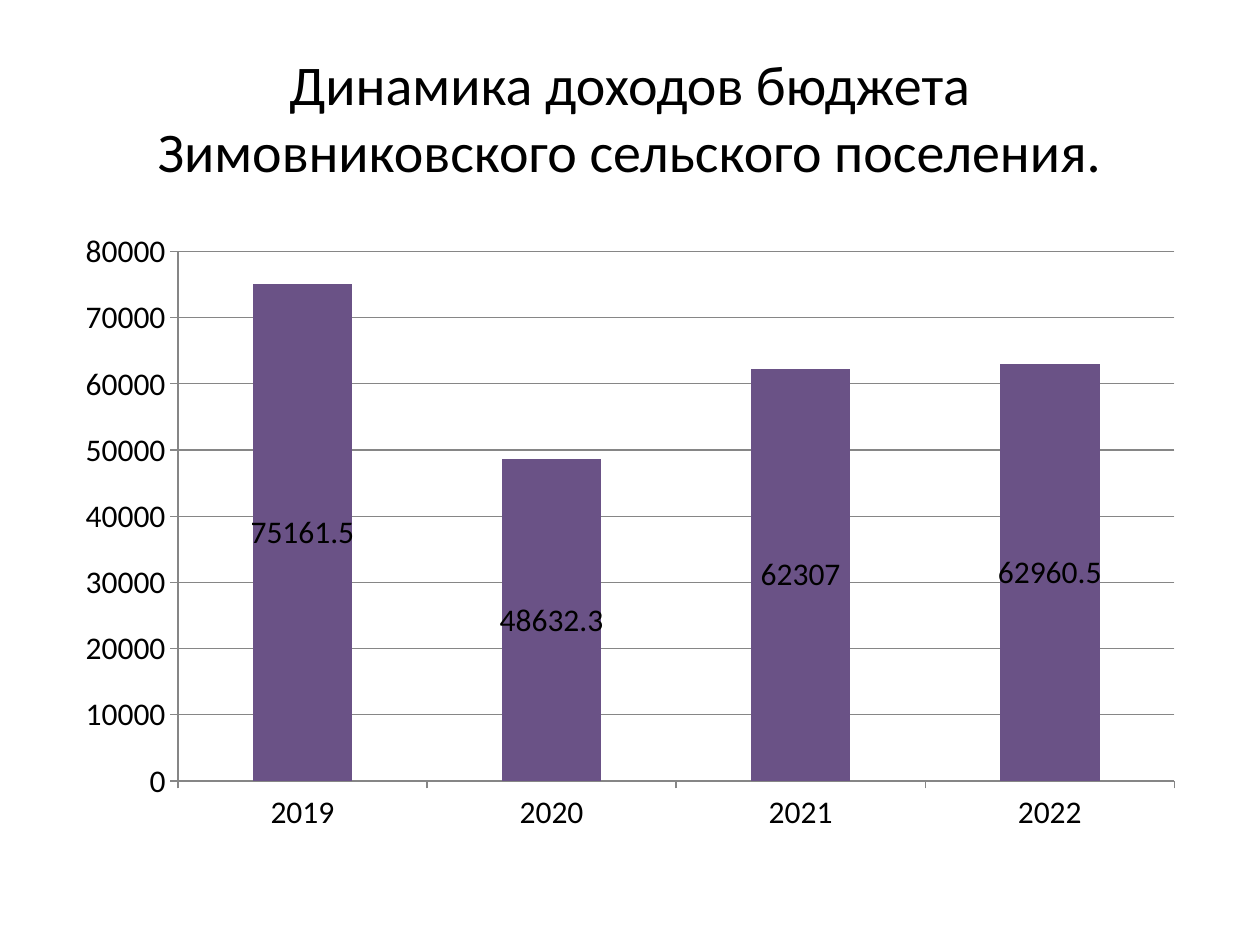
import pptx
import pptx.util
import pptx.chart.data
import pptx.dml.color
import pptx.enum.chart
import pptx.enum.text

RGB = pptx.dml.color.RGBColor
XL = pptx.enum.chart

# Content
TITLE = "Динамика доходов бюджета Зимовниковского сельского поселения."
YEARS = ["2019", "2020", "2021", "2022"]
BLACK = RGB(0x00, 0x00, 0x00)
GREY = RGB(0x86, 0x86, 0x86)
PURPLE = RGB(0x6A, 0x52, 0x86)
RED = RGB(0xC0, 0x50, 0x4D)
GREEN = RGB(0x9B, 0xBB, 0x59)
SERIES = [
    ("Series 1", (75161.5, 48632.3, 62307, 62960.5), PURPLE),
    ("Series 2", (0, 0, 0, 0), RED),
    ("Series 3", (0, 0, 0, 0), GREEN),
]
FONT = "Calibri"

# Geometry in px, 126 to the inch
SLIDE = (1260, 945)
TITLE_BOX = (63, 38, 1134, 157)
CHART_BOX = (63, 220, 1134, 624)


def emu(lengths):
    return [round(n * 914400 / 126) for n in lengths]


def style_font(font, size):
    font.name = FONT
    font.size = pptx.util.Pt(size)
    font.color.rgb = BLACK


prs = pptx.Presentation()
prs.slide_width, prs.slide_height = emu(SLIDE)
s = prs.slides.add_slide(prs.slide_layouts[5])

# Title
title = s.shapes.title
title.left, title.top, title.width, title.height = emu(TITLE_BOX)
tf = title.text_frame
tf.text = TITLE
tf.word_wrap = True
tf.vertical_anchor = pptx.enum.text.MSO_ANCHOR.MIDDLE
p = tf.paragraphs[0]
p.alignment = pptx.enum.text.PP_ALIGN.CENTER
style_font(p.font, 32)

# Stacked column chart
data = pptx.chart.data.CategoryChartData()
data.categories = YEARS
for name, values, color in SERIES:
    data.add_series(name, values)
chart = s.shapes.add_chart(
    XL.XL_CHART_TYPE.COLUMN_STACKED, *emu(CHART_BOX), data).chart
chart.has_title = False
chart.has_legend = False
style_font(chart.font, 18)

plot = chart.plots[0]
plot.gap_width = 150
plot.overlap = 100
plot.vary_by_categories = False
for series, (name, values, color) in zip(plot.series, SERIES):
    series.format.fill.solid()
    series.format.fill.fore_color.rgb = color

# Value labels on the income columns
labels = plot.series[0].data_labels
labels.show_value = True
labels.position = XL.XL_LABEL_POSITION.CENTER
style_font(labels.font, 18)

# Axes and gridlines
value_axis = chart.value_axis
value_axis.minimum_scale = 0
value_axis.maximum_scale = 80000
value_axis.major_unit = 10000
value_axis.has_major_gridlines = True
for axis in (chart.category_axis, value_axis):
    axis.major_tick_mark = XL.XL_TICK_MARK.OUTSIDE
    axis.minor_tick_mark = XL.XL_TICK_MARK.NONE
for part in (chart.category_axis, value_axis, value_axis.major_gridlines):
    part.format.line.color.rgb = GREY
    part.format.line.width = pptx.util.Pt(0.75)

prs.save("out.pptx")
